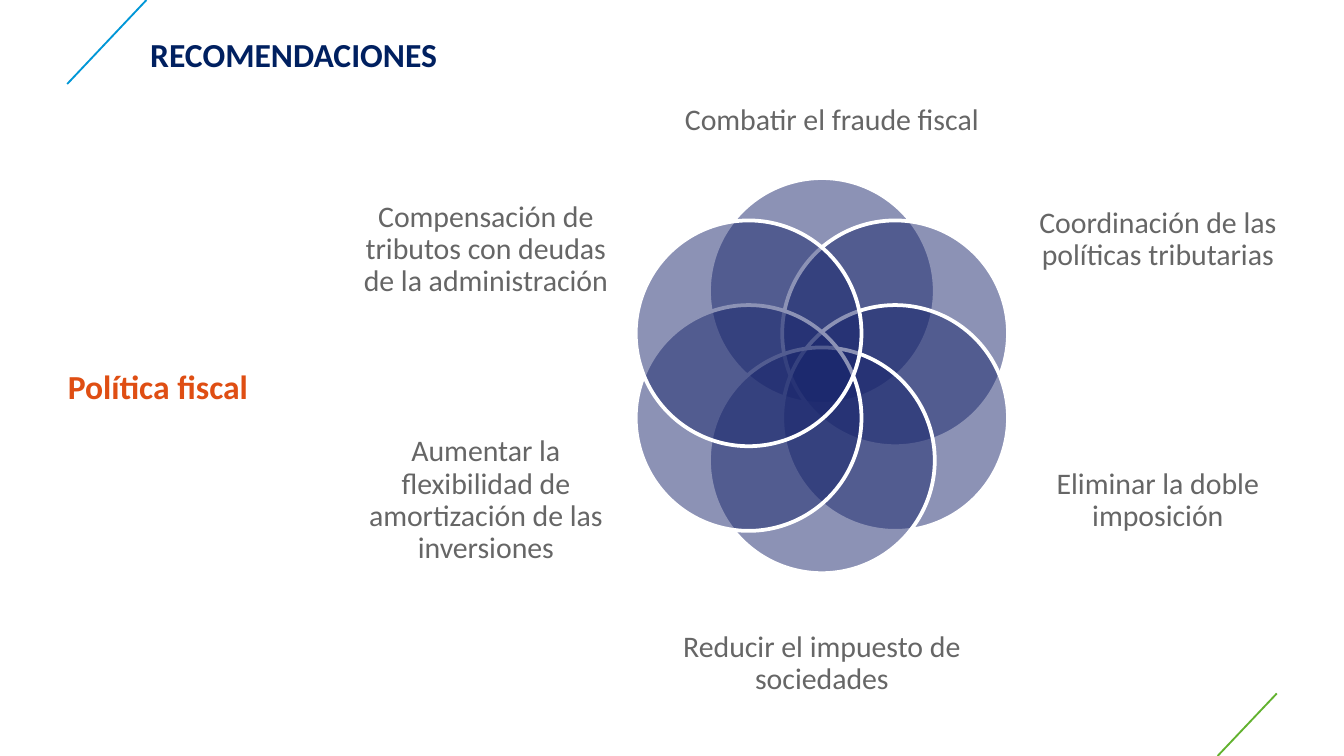
from dataclasses import dataclass
from math import cos, radians, sin

from lxml import etree
from pptx import Presentation
from pptx.dml.color import RGBColor
from pptx.enum.shapes import MSO_CONNECTOR, MSO_SHAPE
from pptx.enum.text import MSO_ANCHOR, MSO_AUTO_SIZE, PP_ALIGN
from pptx.oxml.ns import qn
from pptx.shapes.base import BaseShape
from pptx.slide import Slide
from pptx.util import Emu, Pt

SCALE = 4572
WIDTH, HEIGHT = 2000, 1125
FONT = "Calibri"
NAVY = RGBColor(0x00, 0x20, 0x60)
PETAL = RGBColor(0x1A, 0x27, 0x6D)
GRAY = RGBColor(0x66, 0x66, 0x66)
ORANGE = RGBColor(0xDF, 0x4E, 0x13)
BLUE = RGBColor(0x00, 0x97, 0xD7)
GREEN = RGBColor(0x62, 0xB2, 0x2F)
WHITE = RGBColor(0xFF, 0xFF, 0xFF)
CENTER = PP_ALIGN.CENTER
TOP, MIDDLE = MSO_ANCHOR.TOP, MSO_ANCHOR.MIDDLE
NO_FIT = MSO_AUTO_SIZE.NONE
OVAL = MSO_SHAPE.OVAL
STRAIGHT = MSO_CONNECTOR.STRAIGHT

HUB_X, HUB_Y = 1223, 559
ORBIT, SIZE = 126, 336


@dataclass
class Box:
    left: int
    top: int
    width: int
    height: int


@dataclass
class Label:
    text: str
    box: Box


@dataclass
class Stroke:
    x1: int
    y1: int
    x2: int
    y2: int
    color: RGBColor


LABELS = [
    Label("Combatir el fraude fiscal", Box(986, 66, 504, 228)),
    Label("Coordinación de las políticas tributarias", Box(1525, 232, 396, 250)),
    Label("Eliminar la doble imposición", Box(1525, 605, 396, 280)),
    Label("Reducir el impuesto de sociedades", Box(1014, 874, 418, 228)),
    Label("Aumentar la flexibilidad de amortización de las inversiones",
          Box(525, 605, 396, 280)),
    Label("Compensación de tributos con deudas de la administración",
          Box(525, 232, 396, 280)),
]
STROKES = [
    Stroke(100, 125, 218, 0, BLUE),
    Stroke(1812, HEIGHT, 1900, 1032, GREEN),
]


def px(count: int) -> Emu:
    return Emu(count * SCALE)


def place(shape: BaseShape, box: Box) -> None:
    shape.left, shape.top = px(box.left), px(box.top)
    shape.width, shape.height = px(box.width), px(box.height)


def write(shape: BaseShape, text: str, size: int, color: RGBColor,
          bold: bool = False) -> None:
    frame = shape.text_frame
    frame.text = text
    frame.word_wrap = True
    frame.auto_size = NO_FIT
    frame.vertical_anchor = TOP
    para = frame.paragraphs[0]
    para.alignment = CENTER
    font = para.runs[0].font
    font.name, font.size, font.bold = FONT, Pt(size), bold
    font.color.rgb = color


def add_text(slide: Slide, box: Box) -> BaseShape:
    return slide.shapes.add_textbox(
        px(box.left), px(box.top), px(box.width), px(box.height))


def add_label(slide: Slide, label: Label) -> None:
    shape = add_text(slide, label.box)
    write(shape, label.text, 16, GRAY)
    frame = shape.text_frame
    frame.vertical_anchor = MIDDLE
    frame.margin_left = frame.margin_right = 0
    frame.margin_top = frame.margin_bottom = 0
    frame.paragraphs[0].line_spacing = 0.9


def add_petal(slide: Slide, angle: int) -> None:
    left = round(HUB_X + ORBIT * sin(radians(angle)) - SIZE / 2)
    top = round(HUB_Y - ORBIT * cos(radians(angle)) - SIZE / 2)
    shape = slide.shapes.add_shape(OVAL, px(left), px(top), px(SIZE), px(SIZE))
    shape.shadow.inherit = False
    shape.fill.solid()
    shape.fill.fore_color.rgb = PETAL
    tint = shape.fill._xPr.find(qn("a:solidFill")).find(qn("a:srgbClr"))
    etree.SubElement(tint, qn("a:alpha")).set("val", "50000")
    shape.line.color.rgb = WHITE
    shape.line.width = Pt(2)


def add_stroke(slide: Slide, stroke: Stroke) -> None:
    line = slide.shapes.add_connector(
        STRAIGHT, px(stroke.x1), px(stroke.y1), px(stroke.x2), px(stroke.y2))
    line.line.color.rgb = stroke.color
    line.line.width = Pt(1)
    etree.SubElement(line._element.spPr, qn("a:effectLst"))


def main() -> None:
    deck = Presentation()
    deck.slide_width, deck.slide_height = px(WIDTH), px(HEIGHT)
    slide = deck.slides.add_slide(deck.slide_layouts[5])

    title = slide.shapes.title
    place(title, Box(164, 40, 546, 100))
    write(title, "RECOMENDACIONES", 18, NAVY, True)

    for stroke in STROKES:
        add_stroke(slide, stroke)
    for index, label in enumerate(LABELS):
        add_petal(slide, index * 360 // len(LABELS))
        add_label(slide, label)

    topic = add_text(slide, Box(0, 535, 470, 80))
    write(topic, "Política fiscal", 18, ORANGE, True)
    deck.save("out.pptx")


if __name__ == "__main__":
    main()
